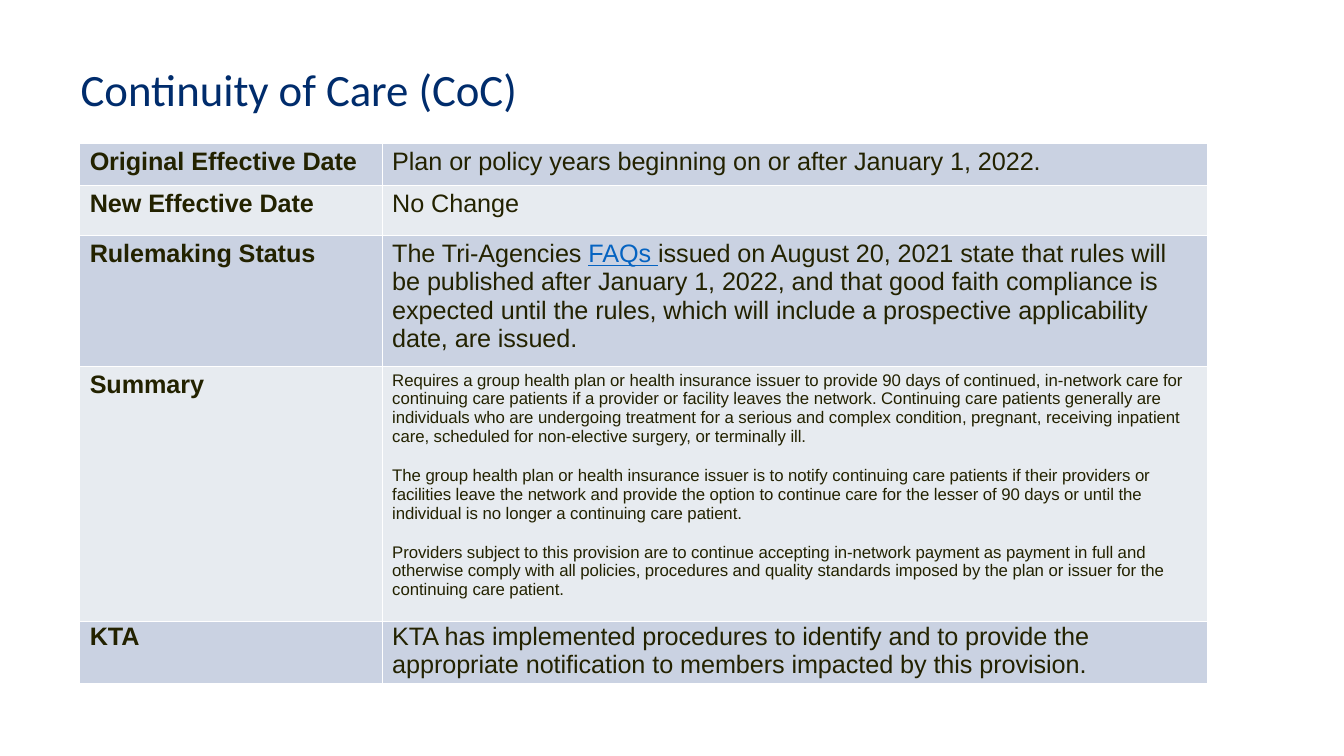
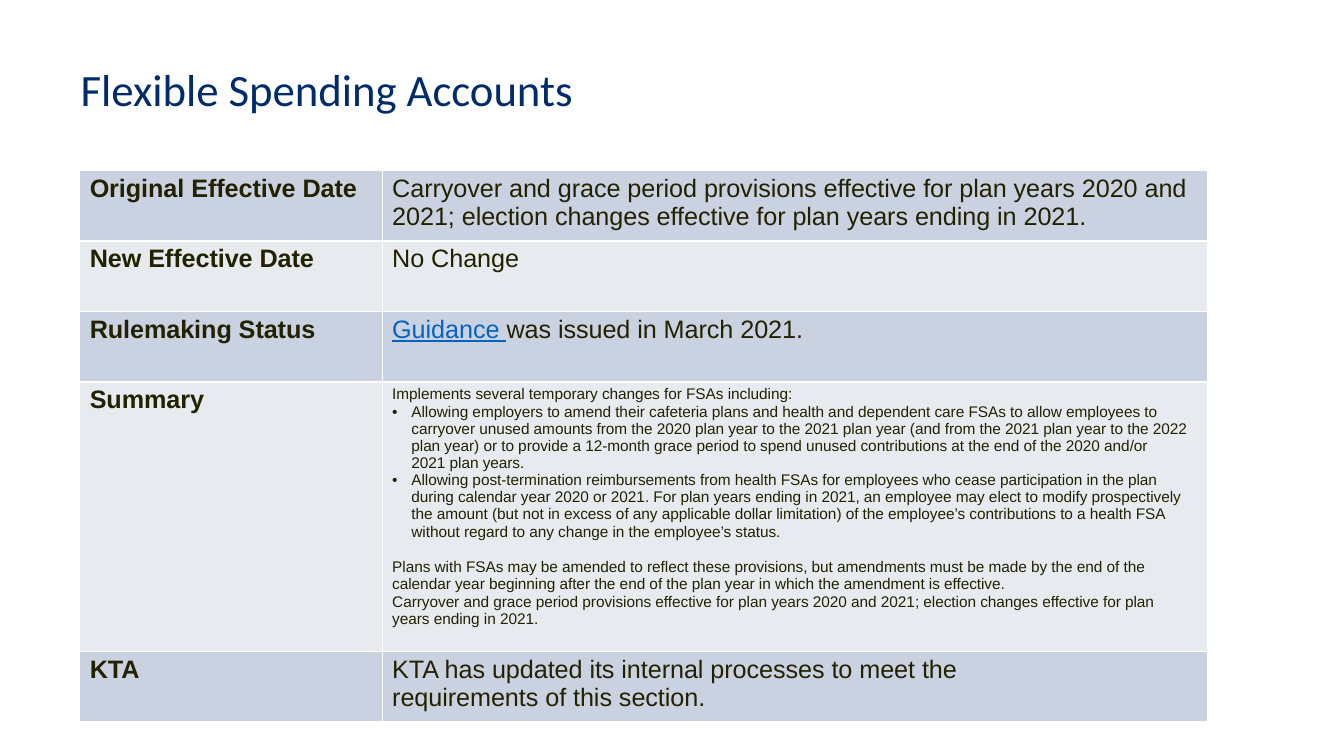
from dataclasses import dataclass

from lxml import etree
from pptx import Presentation
from pptx.dml.color import RGBColor
from pptx.enum.text import MSO_ANCHOR, MSO_AUTO_SIZE, PP_ALIGN
from pptx.oxml.ns import qn
from pptx.util import Inches, Pt

# Shared style
NAVY = RGBColor(0x00, 0x2C, 0x6C)
INK = RGBColor(0x23, 0x22, 0x00)
LINK = RGBColor(0x05, 0x63, 0xC1)
ROW_FILLS = (RGBColor(0xCA, 0xD2, 0xE2), RGBColor(0xE7, 0xEB, 0xF0))
BORDER = "FFFFFF"
TITLE_FONT, BODY_FONT = "Calibri", "Arial"
LEFT = PP_ALIGN.LEFT
MIDDLE, TOP = MSO_ANCHOR.MIDDLE, MSO_ANCHOR.TOP
FIT_SHAPE = MSO_AUTO_SIZE.SHAPE_TO_FIT_TEXT
TITLE_ONLY = 5
MARGIN = 0.79
COLUMN_WIDTHS = (3, 8.19)
NBSP = chr(160)  # keeps two words on one line


@dataclass
class Text:
    """A paragraph; link is a leading or inner part shown as a link."""
    before: str
    link: str = ""
    after: str = ""
    gap: float = 0
    bullet: bool = False


@dataclass
class Row:
    label: str
    height: float
    texts: list
    size: float = 18
    top: float = 0.04
    right: float = 0.1
    gap: float = 3.1


def add_run(paragraph, text, size, color, font=BODY_FONT, bold=False, underline=False):
    run = paragraph.add_run()
    run.text = text
    run.font.name = font
    run.font.size = Pt(size)
    run.font.bold = bold
    run.font.underline = underline
    run.font.color.rgb = color
    run._r.get_or_add_rPr().set("spc", "-5")


def set_indent(paragraph, left, first=0.0, bullet=False):
    properties = paragraph._p.get_or_add_pPr()
    properties.set("marL", str(Inches(left)))
    properties.set("indent", str(Inches(first)))
    if bullet:
        etree.SubElement(properties, qn("a:buFont")).set("typeface", BODY_FONT)
        etree.SubElement(properties, qn("a:buChar")).set("char", "•")


def add_title(slide, text, width):
    title = slide.shapes.title
    title.left, title.top = Inches(MARGIN), Inches(0.6)
    title.width, title.height = Inches(width), Inches(0.55)
    frame = title.text_frame
    frame.margin_left = frame.margin_right = frame.margin_bottom = 0
    frame.margin_top = Inches(0.01)
    frame.vertical_anchor = MIDDLE
    frame.word_wrap = True
    frame.auto_size = FIT_SHAPE
    paragraph = frame.paragraphs[0]
    paragraph.alignment = LEFT
    paragraph.space_before = Pt(1.1)
    set_indent(paragraph, 0.01)
    add_run(paragraph, text, 32, NAVY, font=TITLE_FONT)


def add_borders(cell):
    properties = cell._tc.get_or_add_tcPr()
    for side in ("lnL", "lnR", "lnT", "lnB"):
        line = etree.SubElement(properties, qn(f"a:{side}"), w=str(Pt(1)))
        fill = etree.SubElement(line, qn("a:solidFill"))
        etree.SubElement(fill, qn("a:srgbClr"), val=BORDER)


def fill_cell(cell, texts, row, fill, size, bold=False, right=0.0):
    add_borders(cell)
    cell.fill.solid()
    cell.fill.fore_color.rgb = fill
    cell.margin_left = cell.margin_bottom = 0
    cell.margin_top = Inches(row.top)
    cell.margin_right = Inches(right)
    cell.vertical_anchor = TOP
    frame = cell.text_frame
    for number, text in enumerate(texts):
        paragraph = frame.add_paragraph() if number else frame.paragraphs[0]
        paragraph.space_before = Pt(text.gap if number else row.gap)
        if text.bullet:
            set_indent(paragraph, 0.29, -0.19, bullet=True)
        else:
            set_indent(paragraph, 0.1)
        for part in (text.before, text.link, text.after):
            if part:
                is_link = part == text.link
                add_run(paragraph, part, size, LINK if is_link else INK,
                        bold=bold, underline=is_link)


def add_provision_table(slide, top, rows):
    frame = slide.shapes.add_table(
        len(rows), len(COLUMN_WIDTHS), Inches(MARGIN), Inches(top),
        Inches(sum(COLUMN_WIDTHS)), Inches(sum(row.height for row in rows)))
    table = frame.table
    table.first_row = table.horz_banding = False
    for column, width in zip(table.columns, COLUMN_WIDTHS):
        column.width = Inches(width)
    for number, row in enumerate(rows):
        table.rows[number].height = Inches(row.height)
        fill = ROW_FILLS[number % 2]
        fill_cell(table.cell(number, 0), [Text(row.label)], row, fill, 18, bold=True)
        fill_cell(table.cell(number, 1), row.texts, row, fill, row.size, right=row.right)


def add_provision_slide(presentation, title, title_width, table_top, rows):
    slide = presentation.slides.add_slide(presentation.slide_layouts[TITLE_ONLY])
    add_title(slide, title, title_width)
    add_provision_table(slide, table_top, rows)


# Content
CONTINUITY_ROWS = [
    Row("Original Effective Date", 0.42,
        [Text("Plan or policy years beginning on or after January 1, 2022.")]),
    Row("New Effective Date", 0.5, [Text("No Change")]),
    Row("Rulemaking Status", 1.3, [Text(
        "The Tri-Agencies ", "FAQs ",
        "issued on August 20, 2021 state that rules will "
        f"be{NBSP}published after January 1, 2022, and that good faith compliance is "
        "expected until the rules, which will include a prospective applicability "
        "date, are issued.")]),
    Row("Summary", 2.53, [
        Text("Requires a group health plan or health insurance issuer to provide 90 days of "
             "continued, in-network care for continuing care patients if a provider or "
             "facility leaves the network. Continuing care patients generally are "
             "individuals who are undergoing treatment for a serious and complex condition, "
             "pregnant, receiving inpatient care, scheduled for non-elective surgery, or "
             "terminally ill."),
        Text("The group health plan or health insurance issuer is to notify continuing care "
             "patients if their providers or facilities leave the network and provide the "
             "option to continue care for the lesser of 90 days or until the individual is "
             "no longer a continuing care patient.", gap=14.4),
        Text("Providers subject to this provision are to continue accepting in-network "
             "payment as payment in full and otherwise comply with all policies, procedures "
             "and quality standards imposed by the plan or issuer for the continuing care "
             "patient.", gap=14.4),
    ], size=12),
    Row("KTA", 0.61, [Text(
        "KTA has implemented procedures to identify and to provide the "
        "appropriate notification to members impacted by this provision.")],
        top=0.01, gap=0.6),
]

SPENDING_ROWS = [
    Row("Original Effective Date", 0.7, [Text(
        "Carryover and grace period provisions effective for plan years 2020 and "
        "2021; election changes effective for plan years ending in 2021.")]),
    Row("New Effective Date", 0.7, [Text("No Change")]),
    Row("Rulemaking Status", 0.7, [Text("", "Guidance ", "was issued in March 2021.")]),
    Row("Summary", 2.67, [
        Text("Implements several temporary changes for FSAs including:"),
        Text("Allowing employers to amend their cafeteria plans and health and dependent care "
             "FSAs to allow employees to carryover unused amounts from the 2020 plan year to "
             "the 2021 plan year (and from the 2021 plan year to the 2022 plan year) or to "
             "provide a 12-month grace period to spend unused contributions at the end of the "
             f"2020 and/or 2021{NBSP}plan years.", bullet=True),
        Text("Allowing post-termination reimbursements from health FSAs for employees who "
             "cease participation in the plan during calendar year 2020 or 2021. For plan "
             "years ending in 2021, an employee may elect to modify prospectively the amount "
             "(but not in excess of any applicable dollar limitation) of the employee’s "
             "contributions to a health FSA without regard to any change in the employee’s "
             "status.", bullet=True),
        Text("Plans with FSAs may be amended to reflect these provisions, but amendments must "
             "be made by the end of the calendar year beginning after the end of the plan "
             "year in which the amendment is effective.", gap=13.2),
        Text("Carryover and grace period provisions effective for plan years 2020 and 2021; "
             f"election changes effective for plan years{NBSP}ending in 2021."),
    ], size=11),
    Row("KTA", 0.7, [Text(
        "KTA has updated its internal processes to meet the requirements of this section.")],
        right=1.5),
]


def main():
    presentation = Presentation()
    presentation.slide_width = Inches(13.33)
    presentation.slide_height = Inches(7.5)
    add_provision_slide(presentation, "Continuity of Care (CoC)", 4.88, 1.42, CONTINUITY_ROWS)
    add_provision_slide(presentation, "Flexible Spending Accounts", 5.96, 1.69, SPENDING_ROWS)
    presentation.save("out.pptx")


if __name__ == "__main__":
    main()
